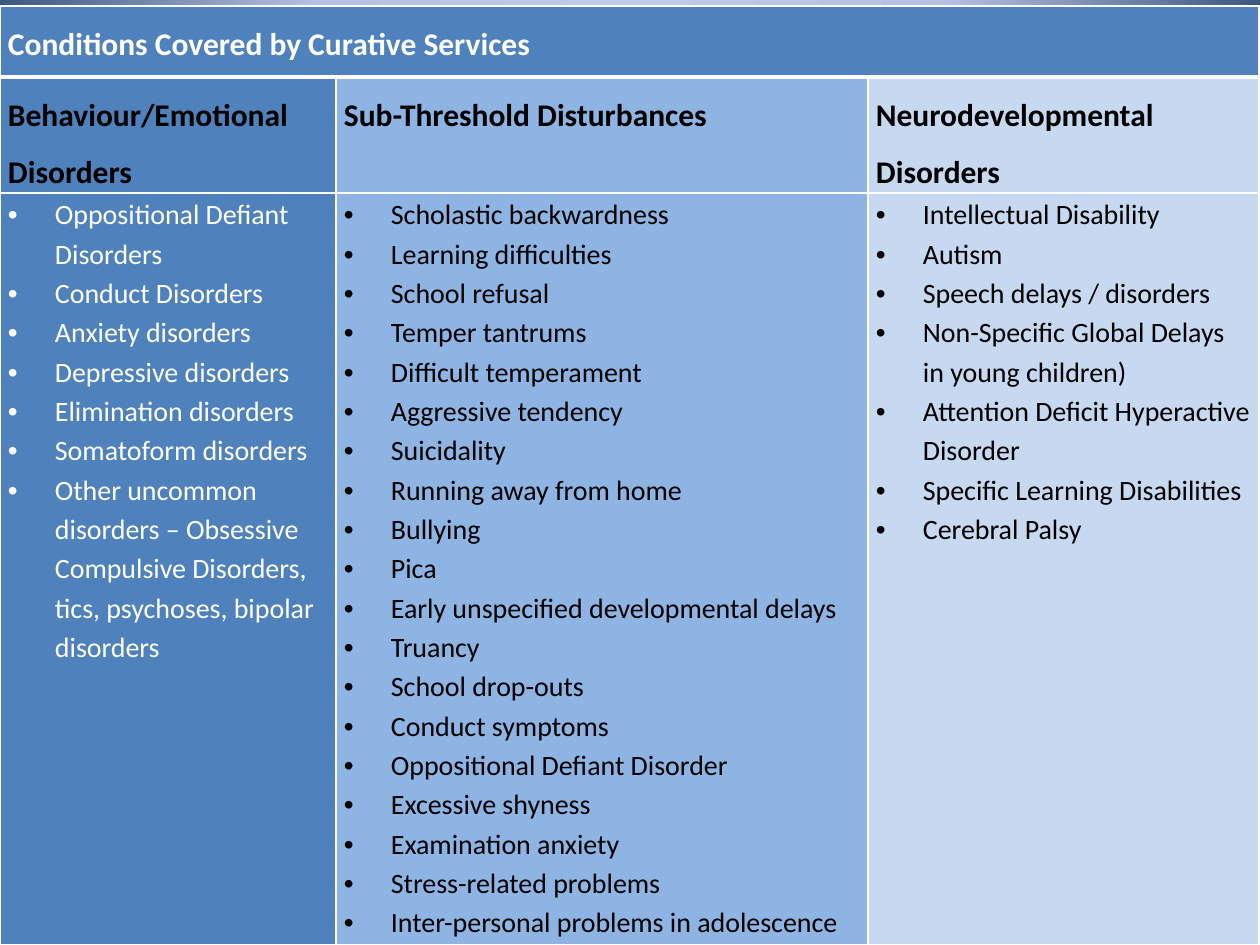
from pptx import Presentation
from pptx import util as u
from pptx.dml.color import RGBColor
from pptx.enum import text
from pptx.oxml import parse_xml
from pptx.oxml.ns import nsdecls

TITLE = "Conditions Covered by Curative Services"
GROUPS = [
    {
        "heading": "Behaviour/Emotional Disorders",
        "width": 336, "fill": "blue", "ink": "white",
        "conditions": [
            "Oppositional Defiant Disorders",
            "Conduct Disorders",
            "Anxiety disorders",
            "Depressive disorders",
            "Elimination disorders",
            "Somatoform disorders",
            "Other uncommon disorders – Obsessive Compulsive Disorders, "
            "tics, psychoses, bipolar disorders",
        ],
    },
    {
        "heading": "Sub-Threshold Disturbances",
        "width": 532, "fill": "mid blue", "ink": "black",
        "conditions": [
            "Scholastic backwardness",
            "Learning difficulties",
            "School refusal",
            "Temper tantrums",
            "Difficult temperament",
            "Aggressive tendency",
            "Suicidality",
            "Running away from home",
            "Bullying",
            "Pica",
            "Early unspecified developmental delays",
            "Truancy",
            "School drop-outs",
            "Conduct symptoms",
            "Oppositional Defiant Disorder",
            "Excessive shyness",
            "Examination anxiety",
            "Stress-related problems",
            "Inter-personal problems in adolescence",
        ],
    },
    {
        "heading": "Neurodevelopmental Disorders",
        "width": 391, "fill": "pale blue", "ink": "black",
        "conditions": [
            "Intellectual Disability",
            "Autism",
            "Speech delays / disorders",
            "Non-Specific Global Delays in young children)",
            "Attention Deficit Hyperactive Disorder",
            "Specific Learning Disabilities",
            "Cerebral Palsy",
        ],
    },
]
COLOURS = {
    "white": "FFFFFF", "black": "000000",
    "blue": "4F81BD", "mid blue": "8EB4E3", "pale blue": "C6D9F1",
}
BACKDROP = [(0, "BFC9E5"), (40, "B5C0E0"), (100, "00234D")]
ROW_HEIGHTS = [71, 116, 752]
TABLE_TOP = 6
SIDE_MARGIN = 8
HANGING_INDENT = 47


def px(length):
    return u.Emu(round(length * 914400 / 126))


def paint_backdrop(slide):
    stops = "".join(
        f'<a:gs pos="{at * 1000}"><a:srgbClr val="{colour}"/></a:gs>'
        for at, colour in BACKDROP)
    slide.element.cSld.insert(0, parse_xml(
        f'<p:bg {nsdecls("p", "a")}><p:bgPr><a:gradFill rotWithShape="1">'
        f'<a:gsLst>{stops}</a:gsLst><a:path path="circle">'
        '<a:fillToRect l="50000" t="-80000" r="50000" b="180000"/></a:path>'
        '</a:gradFill><a:effectLst/></p:bgPr></p:bg>'))


def style_cell(cell, fill, top=1, bottom=1):
    """Set margins, white borders (widths in points) and the fill."""
    cell.margin_left = cell.margin_right = px(SIDE_MARGIN)
    cell.margin_top = cell.margin_bottom = 0
    properties = cell._tc.get_or_add_tcPr()
    for side, width in (("L", 1), ("R", 1), ("T", top), ("B", bottom)):
        properties.append(parse_xml(
            f'<a:ln{side} {nsdecls("a")} w="{u.Pt(width)}"><a:solidFill>'
            f'<a:srgbClr val="{COLOURS["white"]}"/></a:solidFill></a:ln{side}>'))
    cell.fill.solid()
    cell.fill.fore_color.rgb = RGBColor.from_string(COLOURS[fill])


def style_runs(paragraph, size, ink, bold):
    for run in paragraph.runs:
        run.font.name = "Calibri"
        run.font.size = u.Pt(size)
        run.font.bold = bold
        run.font.color.rgb = RGBColor.from_string(COLOURS[ink])


def write_heading(cell, heading, ink):
    paragraph = cell.text_frame.paragraphs[0]
    paragraph.text = heading
    paragraph.alignment = text.PP_ALIGN.JUSTIFY
    paragraph.line_spacing = 1.5
    paragraph.space_before = u.Pt(12)
    style_runs(paragraph, 18, ink, True)


def write_bullets(cell, conditions, ink):
    cell.text_frame.text = "\n".join(conditions)
    for paragraph in cell.text_frame.paragraphs:
        paragraph.line_spacing = 1.15
        properties = paragraph._p.get_or_add_pPr()
        properties.set("marL", str(px(HANGING_INDENT)))
        properties.set("indent", str(-px(HANGING_INDENT)))
        properties.append(parse_xml(f'<a:buFont {nsdecls("a")} typeface="Arial"/>'))
        properties.append(parse_xml(f'<a:buChar {nsdecls("a")} char="•"/>'))
        style_runs(paragraph, 16, ink, False)


def main():
    deck = Presentation()
    deck.slide_width, deck.slide_height = px(1260), px(945)
    slide = deck.slides.add_slide(deck.slide_layouts[6])
    paint_backdrop(slide)

    table = slide.shapes.add_table(
        len(ROW_HEIGHTS), len(GROUPS), 0, px(TABLE_TOP),
        px(sum(group["width"] for group in GROUPS)), px(sum(ROW_HEIGHTS))).table
    for row, height in zip(table.rows, ROW_HEIGHTS):
        row.height = px(height)

    for index, group in enumerate(GROUPS):
        table.columns[index].width = px(group["width"])
        title, heading, conditions = (
            table.cell(row, index) for row in range(len(ROW_HEIGHTS)))
        style_cell(title, "blue", bottom=3)
        style_cell(heading, group["fill"], top=3)
        style_cell(conditions, group["fill"])
        write_heading(heading, group["heading"], "black")
        write_bullets(conditions, group["conditions"], group["ink"])

    table.cell(0, 0).merge(table.cell(0, len(GROUPS) - 1))
    write_heading(table.cell(0, 0), TITLE, "white")
    deck.save("out.pptx")


if __name__ == "__main__":
    main()
